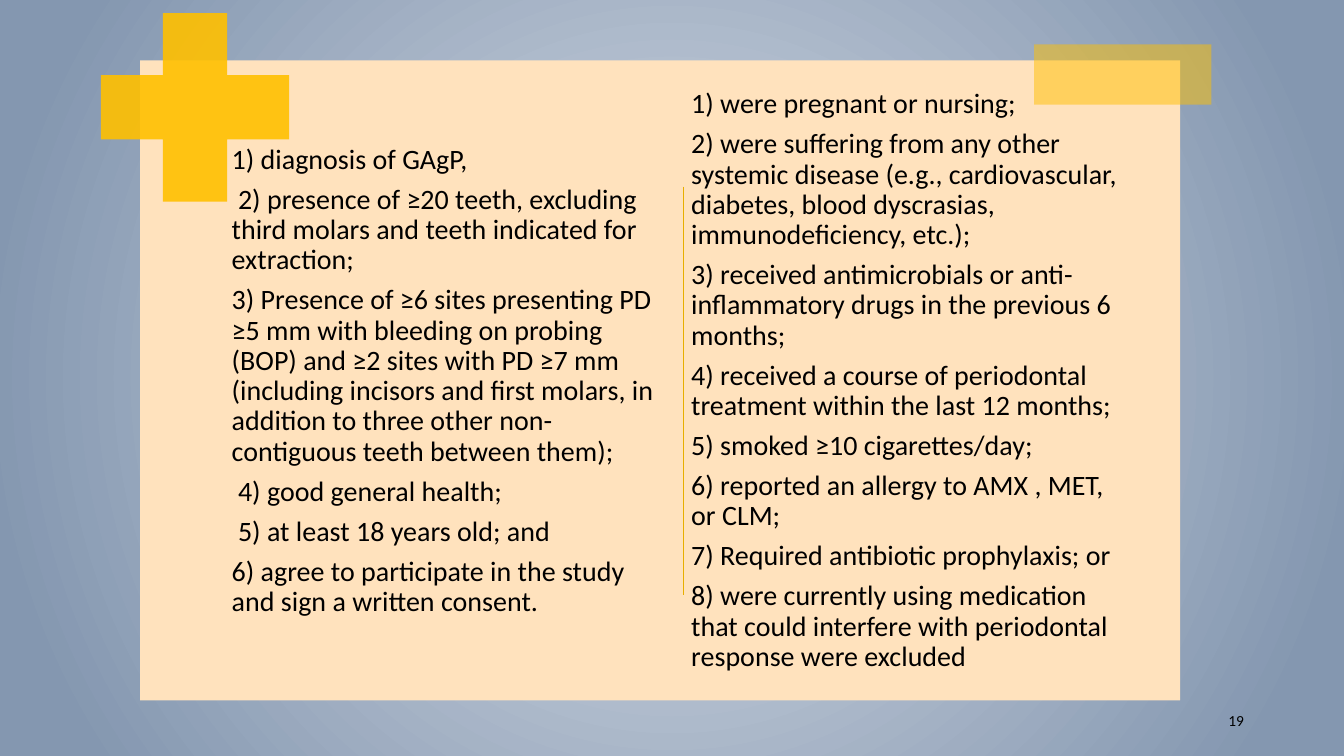
from lxml.etree import SubElement
from pptx import Presentation
from pptx.dml.color import RGBColor
from pptx.enum.shapes import MSO_CONNECTOR, MSO_SHAPE
from pptx.enum.text import MSO_ANCHOR, PP_ALIGN
from pptx.oxml.ns import qn
from pptx.util import Cm, Pt

BG_CENTRE = RGBColor(0xD6, 0xDC, 0xE5)
BG_EDGE = RGBColor(0x84, 0x97, 0xB0)
PEACH = RGBColor(0xFF, 0xE2, 0xBD)
GOLD = RGBColor(0xFF, 0xC0, 0x00)
DARK_GOLD = RGBColor(0xE7, 0xAE, 0x00)
BLACK = RGBColor(0, 0, 0)

# Each criterion: (text, first-line indent in cm)
INCLUSION = [
    ("1) diagnosis of GAgP,", 0),
    ("2) presence of ≥20 teeth, excluding third molars and teeth indicated for extraction;", 0.16),
    ("3) Presence of ≥6 sites presenting PD ≥5 mm with bleeding on probing (BOP) and ≥2 sites "
     "with PD ≥7 mm (including incisors and first molars, in addition to three other "
     "non-contiguous teeth between them);", 0),
    ("4) good general health;", 0.16),
    ("5) at least 18 years old; and", 0.16),
    ("6) agree to participate in the study and sign a written consent.", 0),
]
EXCLUSION = [
    ("1) were pregnant or nursing;", 0),
    ("2) were suffering from any other systemic disease (e.g., cardiovascular, diabetes, "
     "blood dyscrasias, immunodeficiency, etc.);", 0),
    ("3) received antimicrobials or anti-inflammatory drugs in the previous 6 months;", 0),
    ("4) received a course of periodontal treatment within the last 12 months;", 0),
    ("5) smoked ≥10 cigarettes/day;", 0),
    ("6) reported an allergy to AMX , MET, or CLM;", 0),
    ("7) Required antibiotic prophylaxis; or", 0),
    ("8) were currently using medication that could interfere with periodontal response "
     "were excluded", 0),
]


class Deck:
    font = "Calibri"

    def __init__(self, prs):
        self.s = prs.slides.add_slide(prs.slide_layouts[6])

    def radial_background(self, centre, edge):
        fill = self.s.background.fill
        fill.gradient()
        for stop, color, position in zip(fill.gradient_stops, (centre, edge), (0, 0.9)):
            stop.color.rgb = color
            stop.position = position
        grad = self.s.element.find(".//" + qn("a:gradFill"))
        grad.remove(grad.find(qn("a:lin")))
        circle = SubElement(grad, qn("a:path"), path="circle")
        SubElement(circle, qn("a:fillToRect"), l="50000", t="50000", r="50000", b="50000")

    def shape(self, kind, x, y, w, h, color, opacity=100):
        sp = self.s.shapes.add_shape(kind, Cm(x), Cm(y), Cm(w), Cm(h))
        sp.shadow.inherit = False
        sp.fill.solid()
        sp.fill.fore_color.rgb = color
        sp.line.fill.background()
        if opacity < 100:
            clr = sp.fill._xPr.find(".//" + qn("a:srgbClr"))
            SubElement(clr, qn("a:alpha"), val=str(opacity * 1000))
        return sp

    def line(self, x1, y1, x2, y2, color, width):
        cx = self.s.shapes.add_connector(
            MSO_CONNECTOR.STRAIGHT, Cm(x1), Cm(y1), Cm(x2), Cm(y2))
        cx.line.color.rgb = color
        cx.line.width = Pt(width)
        SubElement(cx.element.spPr, qn("a:effectLst"))

    def text_frame(self, x, y, w, h):
        tf = self.s.shapes.add_textbox(Cm(x), Cm(y), Cm(w), Cm(h)).text_frame
        tf.word_wrap = True
        return tf

    def run(self, p, text, size):
        r = p.add_run()
        r.text = text
        r.font.name = self.font
        r.font.size = Pt(size)
        r.font.color.rgb = BLACK

    def criteria(self, x, y, w, h, items):
        tf = self.text_frame(x, y, w, h)
        tf.margin_left = tf.margin_right = tf.margin_top = tf.margin_bottom = Cm(0.1)
        for i, (text, indent) in enumerate(items):
            p = tf.add_paragraph() if i else tf.paragraphs[0]
            p.line_spacing = 0.9
            p.space_after = Pt(7)
            if indent:
                p._p.get_or_add_pPr().set("indent", str(Cm(indent)))
            self.run(p, text, 20)

    def page_number(self, x, y, w, h, number):
        tf = self.text_frame(x, y, w, h)
        tf.vertical_anchor = MSO_ANCHOR.MIDDLE
        p = tf.paragraphs[0]
        p.alignment = PP_ALIGN.RIGHT
        self.run(p, number, 11)


def main():
    prs = Presentation()
    prs.slide_width, prs.slide_height = Cm(33.87), Cm(19.05)
    deck = Deck(prs)
    deck.radial_background(BG_CENTRE, BG_EDGE)
    deck.shape(MSO_SHAPE.RECTANGLE, 3.53, 1.52, 26.21, 16.13, PEACH)
    deck.criteria(5.74, 3.56, 11.3, 10.77, INCLUSION)
    deck.criteria(17.32, 2.16, 11.3, 10.77, EXCLUSION)
    plus = deck.shape(MSO_SHAPE.CROSS, 2.54, 0.33, 4.75, 4.75, GOLD, 90)
    plus.adjustments[0] = 0.33
    deck.shape(MSO_SHAPE.RECTANGLE, 26.06, 1.12, 4.47, 1.52, GOLD, 50)
    deck.line(17.22, 4.7, 17.22, 14.99, DARK_GOLD, 1)
    deck.page_number(29.9, 17.65, 1.7, 1.02, "19")
    prs.save("out.pptx")


if __name__ == "__main__":
    main()
